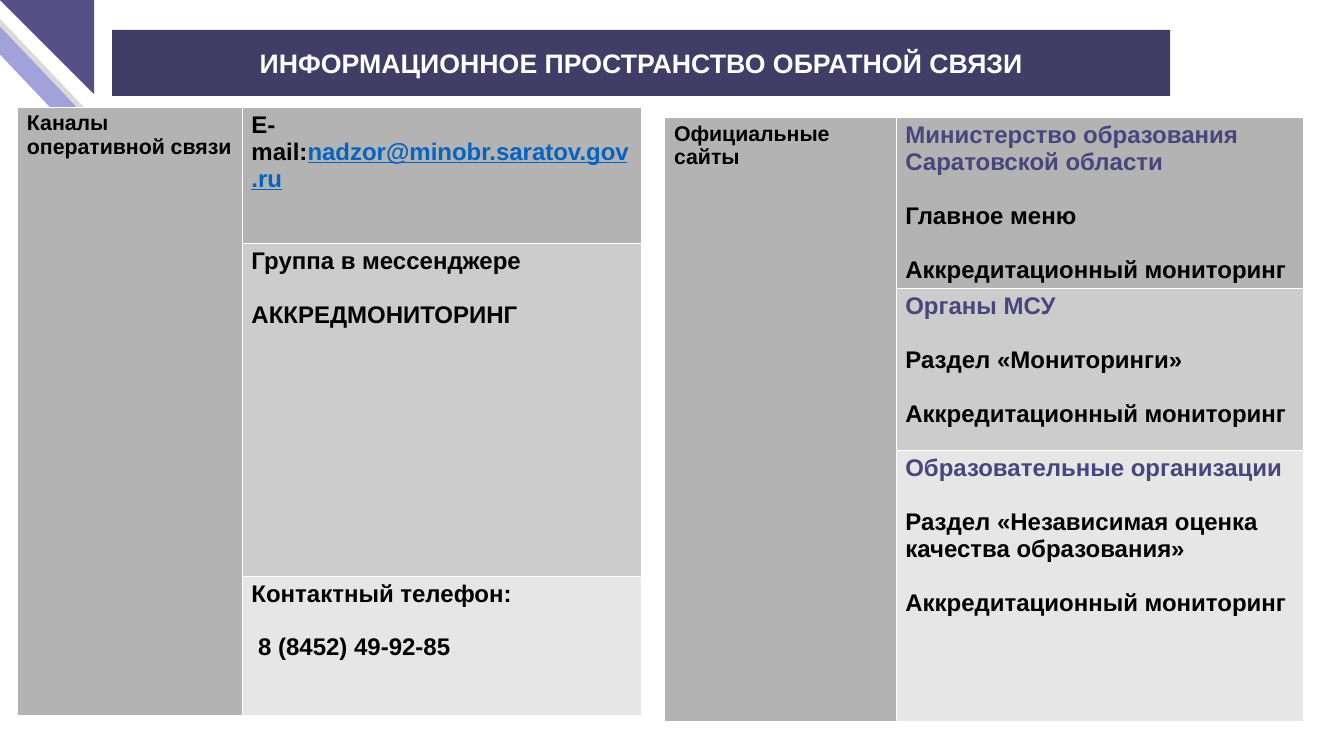
from pptx import Presentation
from pptx.dml.color import RGBColor
from pptx.enum.shapes import MSO_SHAPE
from pptx.enum.text import MSO_ANCHOR, PP_ALIGN
from pptx.oxml import parse_xml
from pptx.oxml.ns import nsdecls
from pptx.util import Cm, Pt

PARALLELOGRAM = MSO_SHAPE.PARALLELOGRAM
RIGHT_TRIANGLE = MSO_SHAPE.RIGHT_TRIANGLE
RECTANGLE = MSO_SHAPE.RECTANGLE
CENTER = PP_ALIGN.CENTER
MIDDLE = MSO_ANCHOR.MIDDLE

THEME = {
    "font": "Arial",
    "title_size": 20, "label_size": 16, "body_size": 18, "gap": 20.1,
    "text": "000000", "accent": "49467D", "link": "0563C1", "white": "FFFFFF",
    "banner": "423D67", "corner": "565087", "stripe": "A2A2DA", "shade": "D9D9D9",
    "rows": ("B3B3B3", "CCCCCC", "E6E6E6"), "border_pt": 0.06,
}

# Content: each paragraph is a list of (text, style) runs
TITLE = "ИНФОРМАЦИОННОЕ ПРОСТРАНСТВО ОБРАТНОЙ СВЯЗИ"
MONITORING = [("Аккредитационный мониторинг", "text")]
PANELS = [
    {
        "label": "Каналы оперативной связи",
        "left": 0.46, "top": 2.82, "columns": (5.94, 10.57), "rows": (3.61, 8.79, 3.68),
        "entries": [
            [[("E-mail:", "text"), ("nadzor@minobr.saratov.gov.ru", "link")]],
            [[("Группа в мессенджере", "text")], [("АККРЕДМОНИТОРИНГ", "text")]],
            [[("Контактный телефон:", "text")], [(" 8 (8452) 49-92-85", "text")]],
        ],
    },
    {
        "label": "Официальные сайты",
        "left": 17.58, "top": 3.1, "columns": (6.12, 10.77), "rows": (4.5, 4.29, 7.16),
        "entries": [
            [[("Министерство образования Саратовской области", "accent")],
             [("Главное меню", "text")], MONITORING],
            [[("Органы МСУ", "accent")], [("Раздел «Мониторинги»", "text")], MONITORING],
            [[("Образовательные организации", "accent")],
             [("Раздел «Независимая оценка качества образования»", "text")], MONITORING],
        ],
    },
]

# Corner ornament: preset, left, top, width, height, colour, flips
ORNAMENT = [
    (PARALLELOGRAM, -0.91, 0.28, 3.84, 3.3, "shade", ("flipH",)),
    (PARALLELOGRAM, -1.37, 0, 3.84, 3.3, "stripe", ("flipH",)),
    (RIGHT_TRIANGLE, 0, 0, 2.49, 2.49, "corner", ("flipH", "flipV")),
]


def color(name):
    return RGBColor.from_string(THEME[name])


def add_block(slide, preset, left, top, width, height, fill):
    block = slide.shapes.add_shape(preset, Cm(left), Cm(top), Cm(width), Cm(height))
    block.shadow.inherit = False
    block.fill.solid()
    block.fill.fore_color.rgb = color(fill)
    block.line.fill.background()
    return block


def set_font(font, size):
    font.name = THEME["font"]
    font.size = Pt(THEME[size])
    font.bold = True


def write_cell(cell, paragraphs, size):
    frame = cell.text_frame
    for index, runs in enumerate(paragraphs):
        paragraph = frame.add_paragraph() if index else frame.paragraphs[0]
        if index:
            paragraph.space_before = Pt(THEME["gap"])
        set_font(paragraph.font, size)
        for text, style in runs:
            run = paragraph.add_run()
            run.text = text
            run.font.color.rgb = color(style)
            if style == "link":
                run.font.underline = True


def paint_cell(cell, fill):
    properties = cell._tc.get_or_add_tcPr()
    for side in ("lnL", "lnR", "lnT", "lnB"):
        properties.append(parse_xml(
            f'<a:{side} {nsdecls("a")} w="{Pt(THEME["border_pt"])}"><a:solidFill>'
            f'<a:srgbClr val="{THEME["white"]}"/></a:solidFill></a:{side}>'))
    cell.fill.solid()
    cell.fill.fore_color.rgb = RGBColor.from_string(fill)


def add_panel(slide, panel):
    columns, rows = panel["columns"], panel["rows"]
    table = slide.shapes.add_table(
        len(rows), len(columns), Cm(panel["left"]), Cm(panel["top"]),
        Cm(sum(columns)), Cm(sum(rows))).table
    table.first_row = table.horz_banding = False
    for column, width in zip(table.columns, columns):
        column.width = Cm(width)
    for index, height in enumerate(rows):
        table.rows[index].height = Cm(height)
        paint_cell(table.cell(index, 0), THEME["rows"][0])
        paint_cell(table.cell(index, 1), THEME["rows"][index])
        write_cell(table.cell(index, 1), panel["entries"][index], "body_size")
    table.cell(0, 0).merge(table.cell(len(rows) - 1, 0))
    write_cell(table.cell(0, 0), [[(panel["label"], "text")]], "label_size")


def add_banner(slide):
    banner = add_block(slide, RECTANGLE, 2.97, 0.79, 27.99, 1.75, "banner")
    frame = banner.text_frame
    frame.word_wrap = True
    frame.vertical_anchor = MIDDLE
    frame.margin_left = frame.margin_right = 0
    frame.margin_top = frame.margin_bottom = Cm(0.2)
    heading = frame.paragraphs[0]
    heading.text = TITLE
    heading.alignment = CENTER
    set_font(heading.font, "title_size")
    heading.font.color.rgb = color("white")


def main():
    deck = Presentation()
    deck.slide_width, deck.slide_height = Cm(35.56), Cm(19.99)
    slide = deck.slides.add_slide(deck.slide_layouts[6])

    # Corner stripes and triangle
    for *geometry, fill, flips in ORNAMENT:
        piece = add_block(slide, *geometry, fill)
        for flip in flips:
            piece.element.spPr.xfrm.set(flip, "1")
        if geometry[0] == PARALLELOGRAM:
            piece.adjustments[0] = 0.95

    # Title and the two tables
    add_banner(slide)
    for panel in PANELS:
        add_panel(slide, panel)

    deck.save("out.pptx")


if __name__ == "__main__":
    main()
